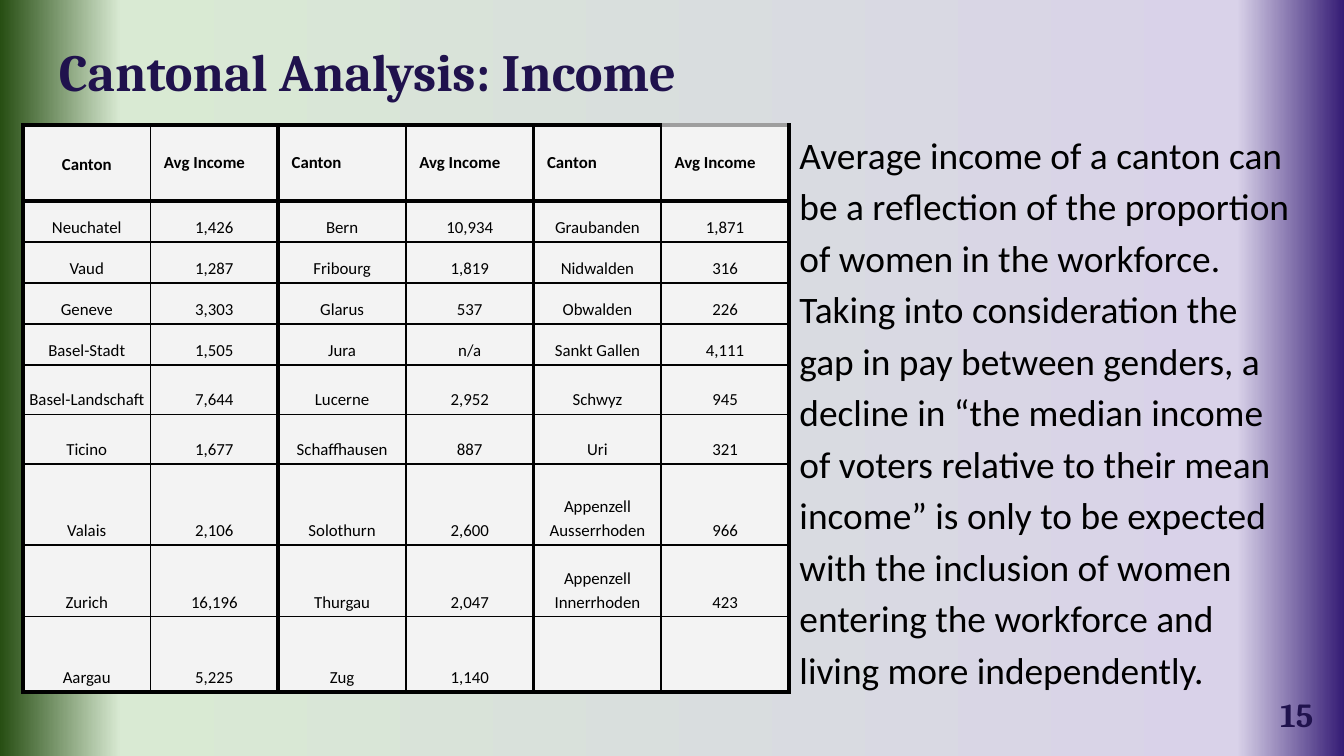
from lxml import etree
from pptx import Presentation
from pptx import util as u
from pptx.dml.color import RGBColor
from pptx.enum import text
from pptx.oxml.ns import qn

SCALE = 4572  # EMU per px, 200 px to the inch
THIN, THICK = 1, 2.25
COLORS = {
    "green": "274E13", "pale_green": "D9EAD3",
    "lilac": "D9D2E9", "purple": "351C75",
    "heading": "20124D", "text": "000000",
    "cell": "F3F3F3", "line": "000000", "gray_line": "9E9E9E",
}
BACKGROUND_STOPS = [(0, "green"), (9, "pale_green"), (92, "lilac"), (100, "purple")]
ROW_HEIGHTS = [113, 61, 61, 61, 61, 74, 74, 120, 107, 112]
INCOMES = [
    ["Canton", "Avg Income"] * 3,
    ["Neuchatel", "1,426", "Bern", "10,934", "Graubanden", "1,871"],
    ["Vaud", "1,287", "Fribourg", "1,819", "Nidwalden", "316"],
    ["Geneve", "3,303", "Glarus", "537", "Obwalden", "226"],
    ["Basel-Stadt", "1,505", "Jura", "n/a", "Sankt Gallen", "4,111"],
    ["Basel-Landschaft", "7,644", "Lucerne", "2,952", "Schwyz", "945"],
    ["Ticino", "1,677", "Schaffhausen", "887", "Uri", "321"],
    ["Valais", "2,106", "Solothurn", "2,600", "Appenzell Ausserrhoden", "966"],
    ["Zurich", "16,196", "Thurgau", "2,047", "Appenzell Innerrhoden", "423"],
    ["Aargau", "5,225", "Zug", "1,140", "", ""],
]
COMMENTARY = (
    "Average income of a canton can be a reflection of the proportion of women "
    "in the workforce. Taking into consideration the gap in pay between genders, "
    "a decline in “the median income of voters relative to their mean income” is "
    "only to be expected with the inclusion of women entering the workforce and "
    "living more independently."
)


def px(length):
    return u.Emu(length * SCALE)


def write(frame, words, font="Calibri", size=9, color="text", bold=False,
          align=text.PP_ALIGN.LEFT, spacing=1.0):
    para = frame.paragraphs[0]
    para.alignment = align
    para.line_spacing = spacing
    span = para.add_run()
    span.text = words
    span.font.name = font
    span.font.size = u.Pt(size)
    span.font.bold = bold
    span.font.color.rgb = RGBColor.from_string(COLORS[color])


def set_margins(target, margin):
    target.margin_left = target.margin_right = px(margin)
    target.margin_top = target.margin_bottom = px(margin)


def add_text(page, box, words, anchor=text.MSO_ANCHOR.TOP, **style):
    frame = page.shapes.add_textbox(*map(px, box)).text_frame
    frame.word_wrap = True
    frame.vertical_anchor = anchor
    set_margins(frame, 20)
    write(frame, words, **style)


def paint_background(page):
    fill = page.background.fill
    fill.gradient()
    fill.gradient_angle = 0
    stops = page.element.xpath(".//a:gsLst")[0]
    for stop in list(stops):
        stops.remove(stop)
    for percent, color in BACKGROUND_STOPS:
        stop = etree.SubElement(stops, qn("a:gs"), pos=str(percent * 1000))
        etree.SubElement(stop, qn("a:srgbClr"), val=COLORS[color])


def add_border(cell, side, width, color):
    properties = cell._tc.get_or_add_tcPr()
    line = etree.SubElement(properties, qn(f"a:ln{side}"), w=str(u.Pt(width)))
    fill = etree.SubElement(line, qn("a:solidFill"))
    etree.SubElement(fill, qn("a:srgbClr"), val=COLORS[color])


def format_cell(cell, row, column):
    last_row, last_column = len(INCOMES) - 1, len(INCOMES[0]) - 1
    # Each canton and income pair is framed by thick lines
    thick = {"L": column % 2 == 0, "R": column % 2 == 1,
             "T": row <= 1, "B": row in (0, last_row)}
    for side, is_thick in thick.items():
        gray = side == "T" and row == 0 and column == last_column
        add_border(cell, side, THICK if is_thick else THIN,
                   "gray_line" if gray else "line")
    cell.fill.solid()
    cell.fill.fore_color.rgb = RGBColor.from_string(COLORS["cell"])
    cell.vertical_anchor = text.MSO_ANCHOR.BOTTOM if row else text.MSO_ANCHOR.MIDDLE
    centered = row > 0 or column == 0
    set_margins(cell, 6 if centered else 20)
    words = INCOMES[row][column]
    if words:
        write(cell.text_frame, words, bold=row == 0,
              align=text.PP_ALIGN.CENTER if centered else text.PP_ALIGN.LEFT,
              spacing=1.15 if centered else 1.0)


def add_income_table(page, box):
    columns = len(INCOMES[0])
    table = page.shapes.add_table(len(INCOMES), columns, *map(px, box)).table
    for column in table.columns:
        column.width = px(box[2] // columns)
    for row, height in zip(table.rows, ROW_HEIGHTS):
        row.height = px(height)
    for row in range(len(INCOMES)):
        for column in range(columns):
            format_cell(table.cell(row, column), row, column)


def build_income_slide(deck, box):
    left, top, width, height = box
    page = deck.slides.add_slide(deck.slide_layouts[6])
    paint_background(page)
    # Heading
    add_text(page, (left + 68, top + 38, width - 136, 126),
             "Cantonal Analysis: Income",
             font="Cambria", size=28, color="heading", bold=True)
    # Commentary to the right of the table
    add_text(page, (left + 1170, top + 166, 782, 748), COMMENTARY,
             size=20, spacing=1.15)
    # Incomes by canton
    add_income_table(page, (left + 34, top + 186, 1140, sum(ROW_HEIGHTS)))
    # Page number
    add_text(page, (left + width - 146, top + height - 105, 120, 86), "15",
             anchor=text.MSO_ANCHOR.MIDDLE, align=text.PP_ALIGN.RIGHT,
             font="Cambria", size=18, color="heading", bold=True)


def main():
    deck = Presentation()
    deck.slide_width, deck.slide_height = px(2000), px(1125)
    build_income_slide(deck, (0, 0, 2000, 1125))
    deck.save("out.pptx")


if __name__ == "__main__":
    main()
